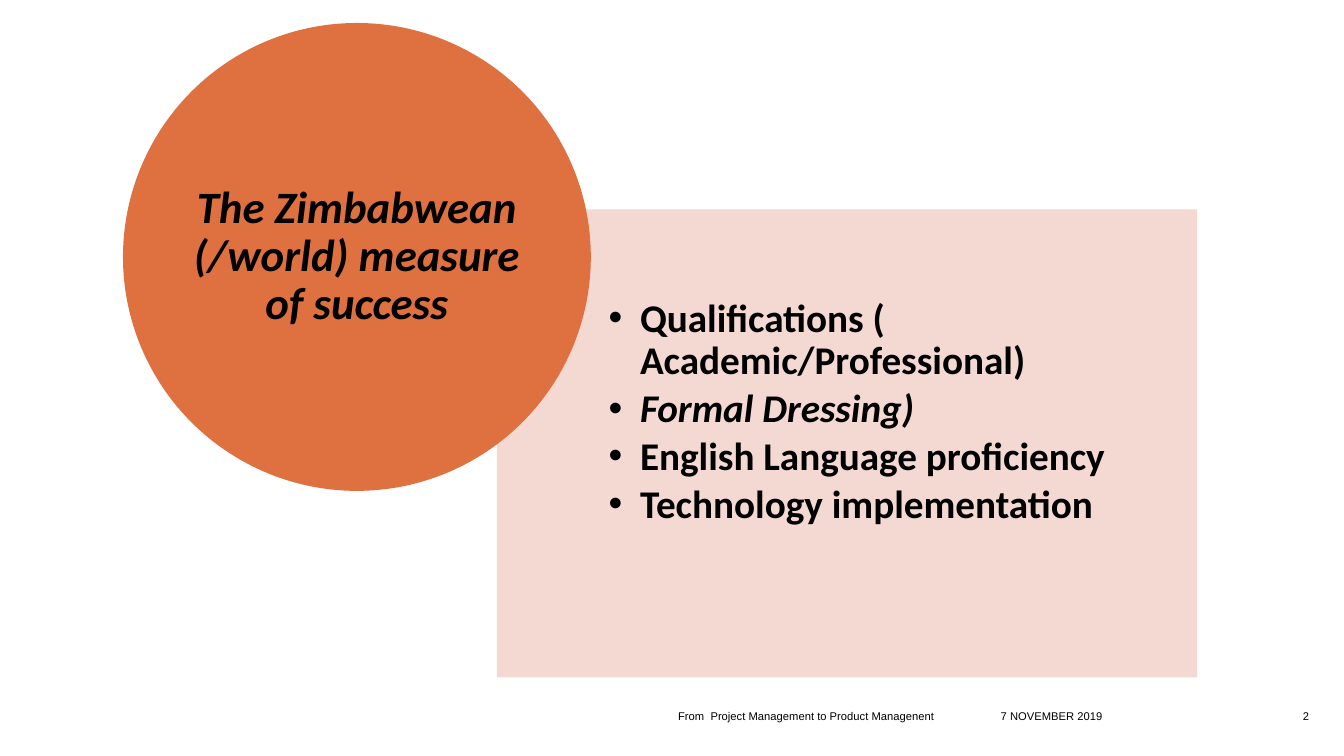
from lxml import etree
from pptx import Presentation
from pptx.dml.color import RGBColor
from pptx.enum import shapes, text
from pptx.oxml.ns import qn
from pptx.util import Cm, Pt

ORANGE = RGBColor(0xDF, 0x71, 0x40)
PINK = RGBColor(0xF3, 0xD5, 0xCF)
BLACK = RGBColor(0, 0, 0)

MEASURES = [
    # wording, italic
    ("Qualifications ( Academic/Professional)", False),
    ("Formal Dressing)", True),
    ("English Language proficiency", False),
    ("Technology implementation", False),
]
FOOTERS = [
    # left, width, alignment, wording
    (17.09, 7.77, text.PP_ALIGN.LEFT, "From  Project Management to Product Managenent"),
    (25.22, 5.05, text.PP_ALIGN.LEFT, "7 NOVEMBER 2019"),
    (31.85, 1.14, text.PP_ALIGN.RIGHT, "2"),
]


def add_block(kind, left, top, width, height, color):
    sp = slide.shapes.add_shape(kind, Cm(left), Cm(top), Cm(width), Cm(height))
    sp.shadow.inherit = False
    sp.fill.solid()
    sp.fill.fore_color.rgb = color
    sp.line.fill.background()
    return sp


def style(p, name, size, align, bold=False, italic=False):
    p.alignment = align
    for r in p.runs:
        r.font.name = name
        r.font.size = Pt(size)
        r.font.bold = bold
        r.font.italic = italic
        r.font.color.rgb = BLACK


prs = Presentation()
prs.slide_width, prs.slide_height = Cm(33.87), Cm(19.05)
slide = prs.slides.add_slide(prs.slide_layouts[6])

# Panel with the list of measures
panel = add_block(shapes.MSO_SHAPE.RECTANGLE, 12.52, 5.28, 17.65, 11.79, PINK)
color = panel.fill._xPr.find(qn("a:solidFill"))[0]
etree.SubElement(color, qn("a:alpha"), val="90000")
tf = panel.text_frame
tf.vertical_anchor = text.MSO_ANCHOR.TOP
tf.margin_left, tf.margin_top = Cm(2.82), Cm(2.24)
tf.margin_right = tf.margin_bottom = Cm(0.56)
for i, (wording, italic) in enumerate(MEASURES):
    p = tf.add_paragraph() if i else tf.paragraphs[0]
    p.text = wording
    p.line_spacing = 0.9
    p.space_after = Pt(4)
    pPr = p._p.get_or_add_pPr()
    pPr.set("marL", str(Cm(0.79)))
    pPr.set("indent", str(-Cm(0.79)))
    etree.SubElement(pPr, qn("a:buFont"), typeface="Arial")
    etree.SubElement(pPr, qn("a:buChar"), char="•")
    style(p, "Calibri", 28, text.PP_ALIGN.LEFT, bold=True, italic=italic)

# Title circle
circle = add_block(shapes.MSO_SHAPE.OVAL, 3.1, 0.58, 11.79, 11.79, ORANGE)
tf = circle.text_frame
tf.vertical_anchor = text.MSO_ANCHOR.MIDDLE
tf.margin_left = tf.margin_top = tf.margin_right = tf.margin_bottom = 0
p = tf.paragraphs[0]
p.text = "The Zimbabwean (/world) measure of success"
p.line_spacing = 0.9
style(p, "Calibri", 32, text.PP_ALIGN.CENTER, bold=True, italic=True)

# Footer: talk, date and slide number
for left, width, align, wording in FOOTERS:
    box = slide.shapes.add_textbox(Cm(left), Cm(17.65), Cm(width), Cm(0.56))
    tf = box.text_frame
    tf.word_wrap = True
    tf.vertical_anchor = text.MSO_ANCHOR.BOTTOM
    tf.margin_left = tf.margin_top = tf.margin_right = tf.margin_bottom = 0
    tf.text = wording
    style(tf.paragraphs[0], "Arial", 8, align)

prs.save("out.pptx")
